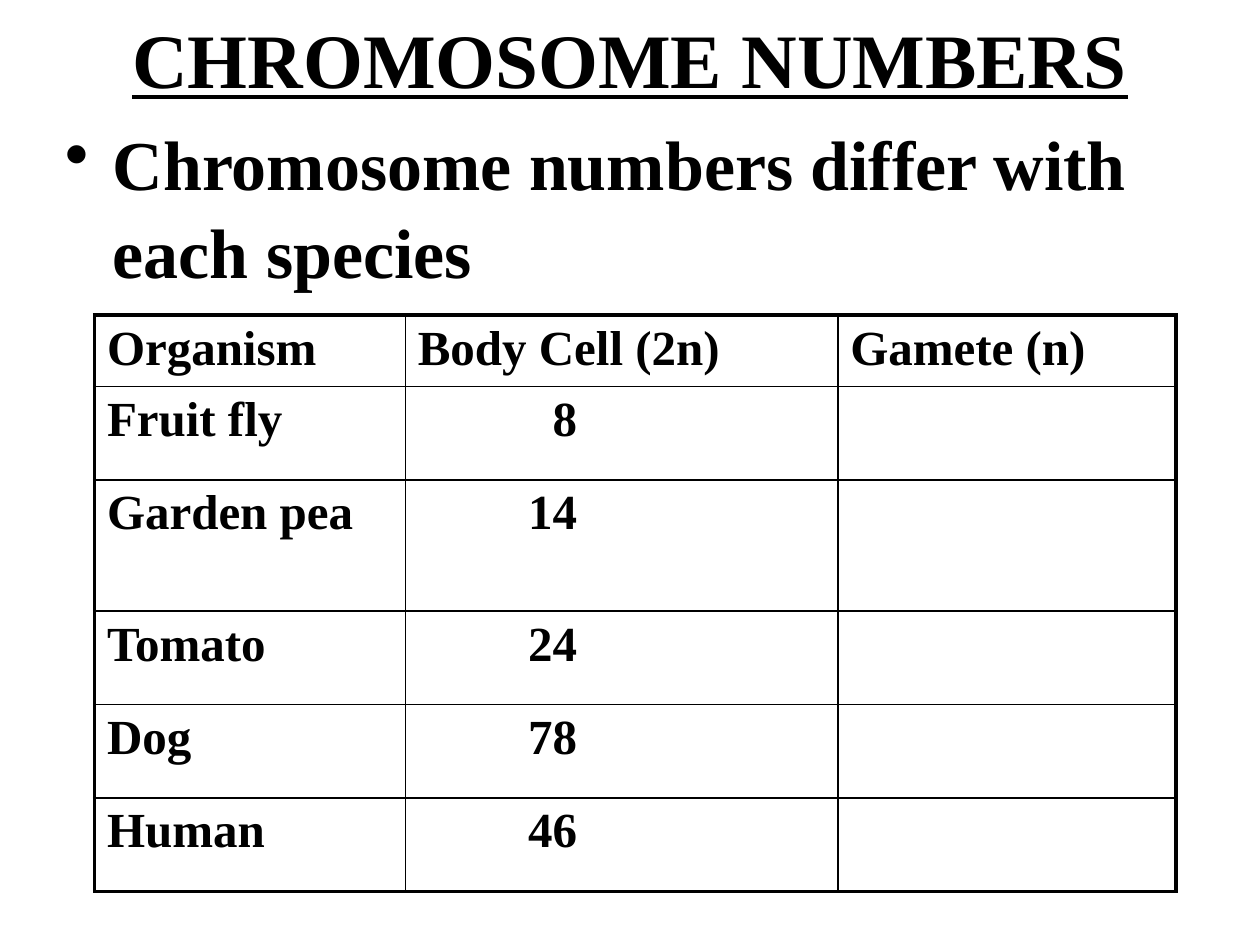
from lxml.etree import SubElement
from pptx import Presentation
from pptx.dml.color import RGBColor
from pptx.enum.text import MSO_ANCHOR as Anchor, PP_ALIGN as Align
from pptx.oxml.ns import qn
from pptx.util import Inches, Pt

UNIT = 1 / 12  # grid step in inches: 120 columns by 90 rows


def grid(steps):
    return Inches(steps * UNIT)


def color(hex_code):
    return RGBColor.from_string(hex_code)


def set_text(frame, text, size, ink, font, align=Align.LEFT, underline=None,
             bullet=None, indent=0.38, line_spacing=None):
    paragraph = frame.paragraphs[0]
    paragraph.alignment = align
    paragraph.space_before = Pt(0)
    paragraph.line_spacing = line_spacing
    if bullet:
        properties = paragraph._p.get_or_add_pPr()
        properties.set("marL", str(Inches(indent)))
        properties.set("indent", str(-Inches(indent)))
        SubElement(properties, qn("a:buChar"), char=bullet)
    run = paragraph.add_run()
    run.text = text
    run.font.name, run.font.size = font, Pt(size)
    run.font.bold, run.font.underline = True, underline
    run.font.color.rgb = color(ink)


class SlideBuilder:
    ink = "000000"
    font = "Times New Roman"
    outer, inner = 2.25, 1  # table line widths in points

    def __init__(self, deck):
        self.slide = deck.slides.add_slide(deck.slide_layouts[5])

    def label(self, frame, text, size, **style):
        set_text(frame, text, size, self.ink, self.font, **style)

    def title(self, text, left, top, width, height):
        heading = self.slide.shapes.title
        heading.left, heading.top = grid(left), grid(top)
        heading.width, heading.height = grid(width), grid(height)
        heading.text_frame.vertical_anchor = Anchor.MIDDLE
        self.label(heading.text_frame, text, 44, align=Align.CENTER, underline=True)

    def bullet(self, text, left, top, width, height):
        frame = self.slide.shapes.add_textbox(
            grid(left), grid(top), grid(width), grid(height)).text_frame
        frame.word_wrap = True
        frame.margin_top = Inches(0.1)
        self.label(frame, text, 40, bullet="•", line_spacing=1.04)

    def border(self, cell, **widths):
        properties = cell._tc.get_or_add_tcPr()
        for side in "LRTB":
            line = SubElement(properties, qn(f"a:ln{side}"), w=str(Pt(widths[side])))
            fill = SubElement(line, qn("a:solidFill"))
            SubElement(fill, qn("a:srgbClr"), val=self.ink)

    def table(self, records, left, top, columns, rows, number_margin):
        table = self.slide.shapes.add_table(
            len(rows), len(columns), grid(left), grid(top),
            grid(sum(columns)), grid(sum(rows))).table
        table.first_row = table.horz_banding = False
        for column, width in zip(table.columns, columns):
            column.width = grid(width)
        for row, height in zip(table.rows, rows):
            row.height = grid(height)

        last_row, last_column = len(rows) - 1, len(columns) - 1
        for r, record in enumerate(records):
            for c, text in enumerate(record):
                cell = table.cell(r, c)
                self.border(cell,
                            L=self.inner if c else self.outer,
                            R=self.inner if c < last_column else self.outer,
                            T=self.inner if r else self.outer,
                            B=self.inner if r < last_row else self.outer)
                cell.fill.background()
                if text.isdigit():
                    cell.margin_right = Inches(number_margin)
                    self.label(cell.text_frame, text, 28, align=Align.RIGHT)
                elif text:
                    self.label(cell.text_frame, text, 28)


def main():
    deck = Presentation()
    deck.slide_width, deck.slide_height = grid(120), grid(90)
    builder = SlideBuilder(deck)

    # Heading and statement
    builder.title("CHROMOSOME NUMBERS", 3, 0, 114, 11)
    builder.bullet("Chromosome numbers differ with each species", 5, 10, 108, 16)

    # Chromosome counts, with the gamete column left to fill in
    body_cells = {"Fruit fly": 8, "Garden pea": 14, "Tomato": 24,
                  "Dog": 78, "Human": 46}
    records = [("Organism", "Body Cell (2n)", "Gamete (n)")]
    records += [(organism, str(count), "") for organism, count in body_cells.items()]
    builder.table(records, 9, 30, columns=[29.6, 41.2, 32.2],
                  rows=[6.8, 8.9, 12.5, 8.9, 8.9, 8.9], number_margin=2.07)

    deck.save("out.pptx")


if __name__ == "__main__":
    main()
